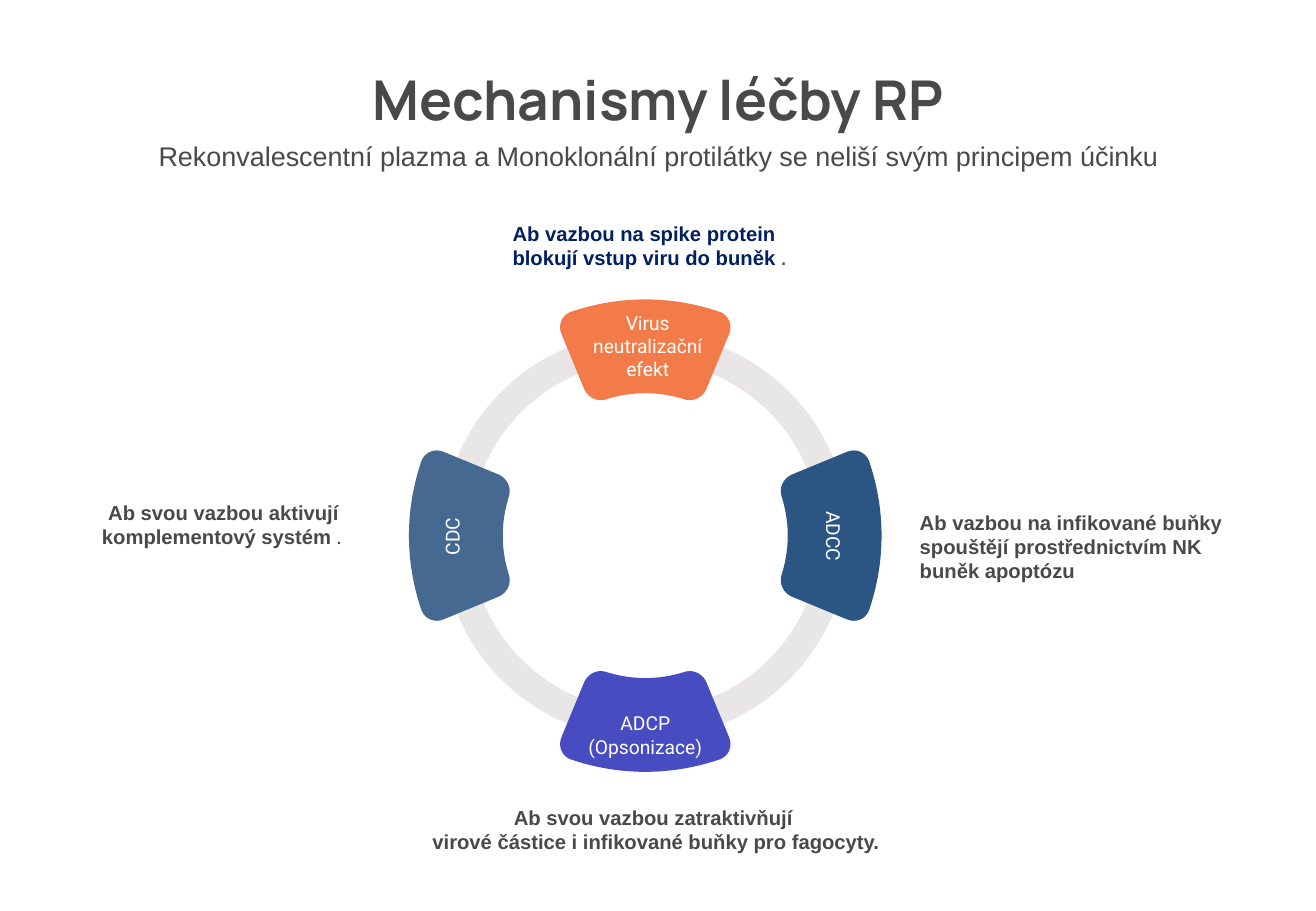
from dataclasses import dataclass
from math import cos, radians, sin

from lxml.etree import SubElement
from pptx import Presentation
from pptx.dml.color import RGBColor
from pptx.enum.shapes import MSO_SHAPE as Shape
from pptx.enum.text import MSO_ANCHOR as Anchor, MSO_AUTO_SIZE as AutoSize, PP_ALIGN as Align
from pptx.oxml.ns import qn
from pptx.util import Inches, Pt

# Grid: 100 columns by 100 rows; the ring's radii are counted in rows
WIDTH, HEIGHT = Inches(10.83), Inches(7.5)
COL, ROW = WIDTH / 100, HEIGHT / 100
CENTER = (49.03 * COL, 58.8 * ROW)
RING, RING_BAND, TILT = 44.67, 0.07, 43.8
SECTOR_RADIUS, SECTOR_FRAME = 21.1, 16.9

GREY, NAVY, WHITE = "494949", "002060", "FFFFFF"

Point = tuple[float, float]

# Rounded sector at the top of the ring, in rows from the ring's centre:
# one point makes a line, three points make a curve
SECTOR_START: Point = (6.67, -16)
SECTOR_STEPS: list[list[Point]] = [
    [(9.2, -22.13)],
    [(9.6, -23.07), (9.2, -24.13), (8.27, -24.53)],
    [(2.87, -26.4), (-2.87, -26.4), (-8.27, -24.53)],
    [(-9.2, -24.13), (-9.6, -23.07), (-9.2, -22.13)],
    [(-6.67, -16)],
    [(-6.27, -15.2), (-5.33, -14.67), (-4.4, -14.93)],
    [(-1.47, -15.87), (1.47, -15.87), (4.4, -14.93)],
    [(5.33, -14.67), (6.27, -15.2), SECTOR_START],
]


@dataclass
class Run:
    text: str
    size: float = 12
    font: str = "Arial"
    color: str = GREY
    bold: bool = True


@dataclass
class Label:
    box: tuple[float, float, float, float]  # column, row, columns, rows
    lines: list[list[Run]]
    align: Align = Align.CENTER
    rotation: float = 0
    wrap: bool = True
    anchor: Anchor = Anchor.TOP


@dataclass
class Sector:
    angle: float
    color: str
    name: Label


def sector_run(text: str) -> list[Run]:
    return [Run(text, 11.4, "Roboto", WHITE, False)]


TITLE = Label((27.05, 6.45, 45.89, 8.67), [[Run("Mechanismy léčby RP ", 32.5, "Manrope")]],
              wrap=False, anchor=Anchor.MIDDLE)
SUBTITLE = Label((10.99, 14.67, 78.12, 4.93), [[Run(
    "Rekonvalescentní plazma a Monoklonální protilátky se neliší svým principem účinku ",
    16, bold=False)]])

SECTORS = [
    Sector(0, "F37B49", Label((42.94, 33.47, 12.56, 9.07),
                              [sector_run("Virus neutralizační efekt")])),
    Sector(90, "2B5683", Label((57.25, 56.93, 12.19, 3.87), [sector_run("ADCC")], rotation=90)),
    Sector(270, "456990", Label((28.25, 56.93, 12.19, 3.87), [sector_run("CDC")], rotation=270)),
    Sector(180, "474CC1", Label((42.94, 77.47, 12.19, 6.4),
                                [sector_run("ADCP"), sector_run("(Opsonizace)")])),
]

EXPLANATIONS = [
    Label((38.04, 23.6, 23.55, 6.67),
          [[Run("Ab vazbou na spike protein blokují vstup viru do buněk ", color=NAVY),
            Run(".", 10)]], Align.LEFT),
    Label((68.98, 55.33, 26.78, 9.47),
          [[Run("Ab vazbou na infikované buňky spouštějí prostřednictvím NK buněk apoptózu")]],
          Align.LEFT),
    Label((5.26, 54.27, 23.45, 6.67),
          [[Run("Ab svou vazbou aktivují komplementový systém "), Run(". ", 9.8, "Lato")]]),
    Label((31.49, 87.73, 36.75, 6.67),
          [[Run("Ab svou vazbou zatraktivňují ")],
           [Run("virové částice i infikované buňky pro fagocyty.")]]),
]


def rgb(value: str) -> RGBColor:
    return RGBColor.from_string(value)


def apply(target, values: dict) -> None:
    for name, value in values.items():
        setattr(target, name, value)


def write(sp, label: Label) -> None:
    """Place a text shape on the grid and fill it."""
    left, top, width, height = label.box
    apply(sp, {"left": round(left * COL), "top": round(top * ROW),
               "width": round(width * COL), "height": round(height * ROW),
               "rotation": label.rotation})
    tf = sp.text_frame
    apply(tf, {"auto_size": AutoSize.NONE, "word_wrap": label.wrap,
               "vertical_anchor": label.anchor})
    for i, line in enumerate(label.lines):
        p = tf.add_paragraph() if i else tf.paragraphs[0]
        apply(p, {"alignment": label.align, "space_before": Pt(0)})
        for run in line:
            r = p.add_run()
            r.text = run.text
            apply(r.font, {"size": Pt(run.size), "name": run.font, "bold": run.bold})
            r.font.color.rgb = rgb(run.color)


def paint(sp, color: str) -> None:
    sp.shadow.inherit = False
    sp.fill.solid()
    sp.fill.fore_color.rgb = rgb(color)
    sp.line.fill.background()


def turn(point: Point, degrees: float) -> Point:
    x, y = point
    c, s = cos(radians(degrees)), sin(radians(degrees))
    return x * c - y * s, x * s + y * c


def square(cx: float, cy: float, size: float) -> dict:
    """Format values of a tilted square frame about a centre."""
    return {"left": round(cx - size / 2), "top": round(cy - size / 2),
            "width": round(size), "height": round(size), "rotation": TILT}


def draw_sector(shapes, sector: Sector) -> None:
    size = SECTOR_FRAME * ROW

    def local(point: Point) -> tuple[int, int]:
        x, y = turn((point[0], point[1] + SECTOR_RADIUS), sector.angle - TILT)
        return round(size / 2 + x * ROW), round(size / 2 + y * ROW)

    builder = shapes.build_freeform(*local(SECTOR_START))
    builder.add_line_segments([local(step[-1]) for step in SECTOR_STEPS], close=True)
    sp = builder.convert_to_shape()
    dx, dy = turn((0, -SECTOR_RADIUS * ROW), sector.angle)
    apply(sp, square(CENTER[0] + dx, CENTER[1] + dy, size))
    paint(sp, sector.color)

    # Rounded corners and arcs need curve segments
    outline = next(sp._element.iter(qn("a:path")))
    for child in list(outline):
        outline.remove(child)
    for key in ("w", "h"):
        outline.set(key, str(round(size)))
    for i, step in enumerate([[SECTOR_START]] + SECTOR_STEPS):
        tag = "a:moveTo" if i == 0 else "a:lnTo" if len(step) == 1 else "a:cubicBezTo"
        segment = SubElement(outline, qn(tag))
        for point in step:
            x, y = local(point)
            SubElement(segment, qn("a:pt"), x=str(x), y=str(y))
    SubElement(outline, qn("a:close"))


def draw_ring(shapes) -> None:
    sp = shapes.add_shape(Shape.DONUT, 0, 0, 0, 0)
    apply(sp, square(*CENTER, RING * ROW))
    sp.adjustments[0] = RING_BAND
    paint(sp, "E8E6E6")


def main() -> None:
    prs = Presentation()
    apply(prs, {"slide_width": WIDTH, "slide_height": HEIGHT})
    slide = prs.slides.add_slide(prs.slide_layouts[0])
    shapes = slide.shapes

    # Heading
    write(shapes.title, TITLE)
    write(slide.placeholders[1], SUBTITLE)

    # Ring with four sectors
    draw_ring(shapes)
    for sector in SECTORS:
        draw_sector(shapes, sector)

    # Sector names and explanations
    for label in [sector.name for sector in SECTORS] + EXPLANATIONS:
        write(shapes.add_textbox(0, 0, 0, 0), label)

    prs.save("out.pptx")


if __name__ == "__main__":
    main()
